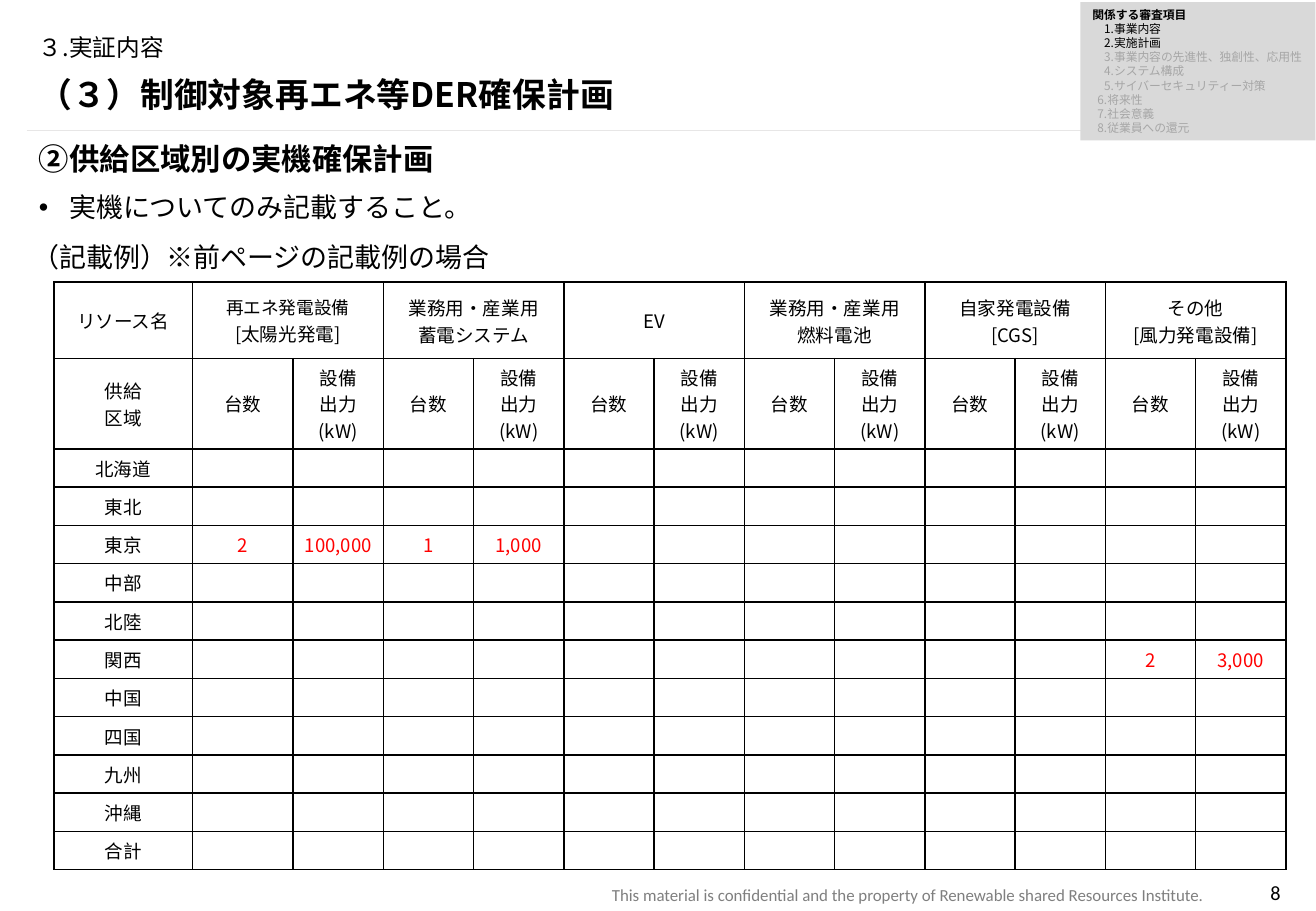
from lxml import etree
from pptx import Presentation
from pptx.dml.color import RGBColor
from pptx.enum.shapes import MSO_CONNECTOR, MSO_SHAPE
from pptx.enum.text import MSO_ANCHOR, PP_ALIGN
from pptx.oxml.ns import qn
from pptx.util import Pt

LEFT, CENTER, RIGHT = PP_ALIGN.LEFT, PP_ALIGN.CENTER, PP_ALIGN.RIGHT
TOP, MIDDLE, BOTTOM = MSO_ANCHOR.TOP, MSO_ANCHOR.MIDDLE, MSO_ANCHOR.BOTTOM
JAPANESE, LATIN = "Noto Sans CJK JP", "Calibri"
BLACK, RED, PALE = "000000", "FF0000", "A6A6A6"

# Content
SECTION = "３.実証内容"
TITLE = "（３）制御対象再エネ等DER確保計画"
HEADING = "②供給区域別の実機確保計画"
INSTRUCTION = "実機についてのみ記載すること。"
EXAMPLE = "（記載例）※前ページの記載例の場合"
FOOTER = "This material is confidential and the property of Renewable shared Resources Institute."
PAGE_NUMBER = "8"

# Criteria: text, left indent, colour, bold
CRITERIA = [
    ("関係する審査項目", 0, BLACK, True),
    ("1.事業内容", 7, BLACK, False),
    ("2.実施計画", 7, BLACK, False),
    ("3.事業内容の先進性、独創性、応用性", 7, PALE, False),
    ("4.システム構成", 7, PALE, False),
    ("5.サイバーセキュリティー対策", 7, PALE, False),
    ("6.将来性", 3, PALE, False),
    ("7.社会意義", 3, PALE, False),
    ("8.従業員への還元", 3, PALE, False),
]

RESOURCES = [
    ("再エネ発電設備", "[太陽光発電]"),
    ("業務用・産業用", "蓄電システム"),
    ("EV",),
    ("業務用・産業用", "燃料電池"),
    ("自家発電設備", "[CGS]"),
    ("その他", "[風力発電設備]"),
]
RESOURCE_LABEL, AREA_LABEL = ("リソース名",), ("供給", "区域")
MEASURES = [("台数",), ("設備", "出力", "(kW)")]
AREAS = ["北海道", "東北", "東京", "中部", "北陸", "関西",
         "中国", "四国", "九州", "沖縄", "合計"]
# Planned units and output: (area, resource index) -> values
PLANS = {
    ("東京", 0): ("2", "100,000"),
    ("東京", 1): ("1", "1,000"),
    ("関西", 5): ("2", "3,000"),
}


def color(value):
    return RGBColor.from_string(value)


def add_text(frame, text, size=11, font=JAPANESE, fill=BLACK, bold=False,
             align=LEFT, spacing=None, before=0, indent=0, bullet=None):
    para = frame.paragraphs[0]
    if para.runs:
        para = frame.add_paragraph()
    para.alignment = align
    if spacing:
        para.line_spacing = spacing
    para.space_before = Pt(before)
    properties = para._p.get_or_add_pPr()
    if indent:
        properties.set("marL", str(Pt(indent)))
    if bullet:
        properties.set("indent", str(-Pt(indent)))
        etree.SubElement(properties, qn("a:buFont"), typeface="Arial")
        etree.SubElement(properties, qn("a:buChar"), char=bullet)
    span = para.add_run()
    span.text = text
    span.font.size = Pt(size)
    span.font.name = font
    span.font.bold = bold
    span.font.color.rgb = color(fill)
    etree.SubElement(span._r.get_or_add_rPr(), qn("a:ea"), typeface=font)


def add_box(left, top, width, height, anchor=TOP):
    frame = page.shapes.add_textbox(Pt(left), Pt(top), Pt(width), Pt(height)).text_frame
    frame.word_wrap = True
    frame.vertical_anchor = anchor
    return frame


def fill_cell(cell, lines, fill=BLACK):
    cell.margin_left = cell.margin_right = cell.margin_top = cell.margin_bottom = 0
    cell.vertical_anchor = MIDDLE
    for line in lines:
        size = 10.5 if line == RESOURCES[0][0] else 11
        add_text(cell.text_frame, line, size=size, fill=fill, align=CENTER)
    if not lines:
        etree.SubElement(cell.text_frame.paragraphs[0]._p, qn("a:endParaRPr"), sz="1100")


def style_cell(cell):
    properties = cell._tc.get_or_add_tcPr()
    for side in ("a:lnL", "a:lnR", "a:lnT", "a:lnB"):
        line = etree.SubElement(properties, qn(side), w=str(Pt(1)))
        solid = etree.SubElement(line, qn("a:solidFill"))
        etree.SubElement(solid, qn("a:srgbClr"), val=BLACK)
    cell.fill.background()


deck = Presentation()
deck.slide_width, deck.slide_height = Pt(780), Pt(540)
page = deck.slides.add_slide(deck.slide_layouts[6])

# Rule under the title
rule = page.shapes.add_connector(MSO_CONNECTOR.STRAIGHT, Pt(16), Pt(77), Pt(764), Pt(77))
rule.line.color.rgb = color("E7E6E6")
rule.line.width = Pt(0.25)
etree.SubElement(rule._element.spPr, qn("a:effectLst"))

# Footer
number = add_box(702, 518.4, 57, 21.6)
number.margin_left = number.margin_right = 0
add_text(number, PAGE_NUMBER, size=12, font=LATIN, align=RIGHT)
add_text(add_box(268, 520.6, 452, 19.4), FOOTER, size=10, font=LATIN,
         fill="7F7F7F", align=RIGHT)

# Supply plan table
column_widths = [82, 59.8] + [53.5] * (2 * len(RESOURCES) - 1)
row_heights = [45.4, 53.5] + [22.69] * len(AREAS)
plan = page.shapes.add_table(len(row_heights), len(column_widths), Pt(32), Pt(167.2),
                             Pt(sum(column_widths)), Pt(sum(row_heights))).table
plan.first_row = plan.horz_banding = False
for column, width in zip(plan.columns, column_widths):
    column.width = Pt(width)
for row, height in zip(plan.rows, row_heights):
    row.height = Pt(height)

fill_cell(plan.cell(0, 0), RESOURCE_LABEL)
fill_cell(plan.cell(1, 0), AREA_LABEL)
for row, area in enumerate(AREAS, 2):
    fill_cell(plan.cell(row, 0), (area,))
for index, resource in enumerate(RESOURCES):
    first = 1 + 2 * index
    plan.cell(0, first).merge(plan.cell(0, first + 1))
    fill_cell(plan.cell(0, first), resource)
    for offset, measure in enumerate(MEASURES):
        fill_cell(plan.cell(1, first + offset), measure)
        for row, area in enumerate(AREAS, 2):
            values = PLANS.get((area, index))
            fill_cell(plan.cell(row, first + offset),
                      (values[offset],) if values else (), fill=RED)
for cell in plan.iter_cells():
    style_cell(cell)

# Headings and instructions
body = add_box(16, 82, 749, 80)
add_text(body, HEADING, size=18, bold=True, spacing=0.9, before=10)
add_text(body, INSTRUCTION, size=16, spacing=0.9, before=10, indent=18, bullet="•")
add_text(add_box(16, 15, 748, 28, MIDDLE), SECTION, size=14, spacing=0.9)
add_text(add_box(16, 43, 749, 28, BOTTOM), TITLE, size=20, bold=True, spacing=0.8)
add_text(add_box(12.2, 139, 393, 26.6), EXAMPLE, size=16)

# Related review criteria
panel = page.shapes.add_shape(MSO_SHAPE.RECTANGLE, Pt(640.4), Pt(1.2), Pt(139.2), Pt(82))
panel.shadow.inherit = False
panel.fill.solid()
panel.fill.fore_color.rgb = color("D9D9D9")
panel.line.fill.background()
criteria = panel.text_frame
criteria.word_wrap = True
criteria.vertical_anchor = MIDDLE
criteria.margin_right = criteria.margin_top = criteria.margin_bottom = 0
for text, indent, fill, bold in CRITERIA:
    add_text(criteria, text, size=7, fill=fill, bold=bold, indent=indent, spacing=Pt(8.4))

deck.save("out.pptx")
